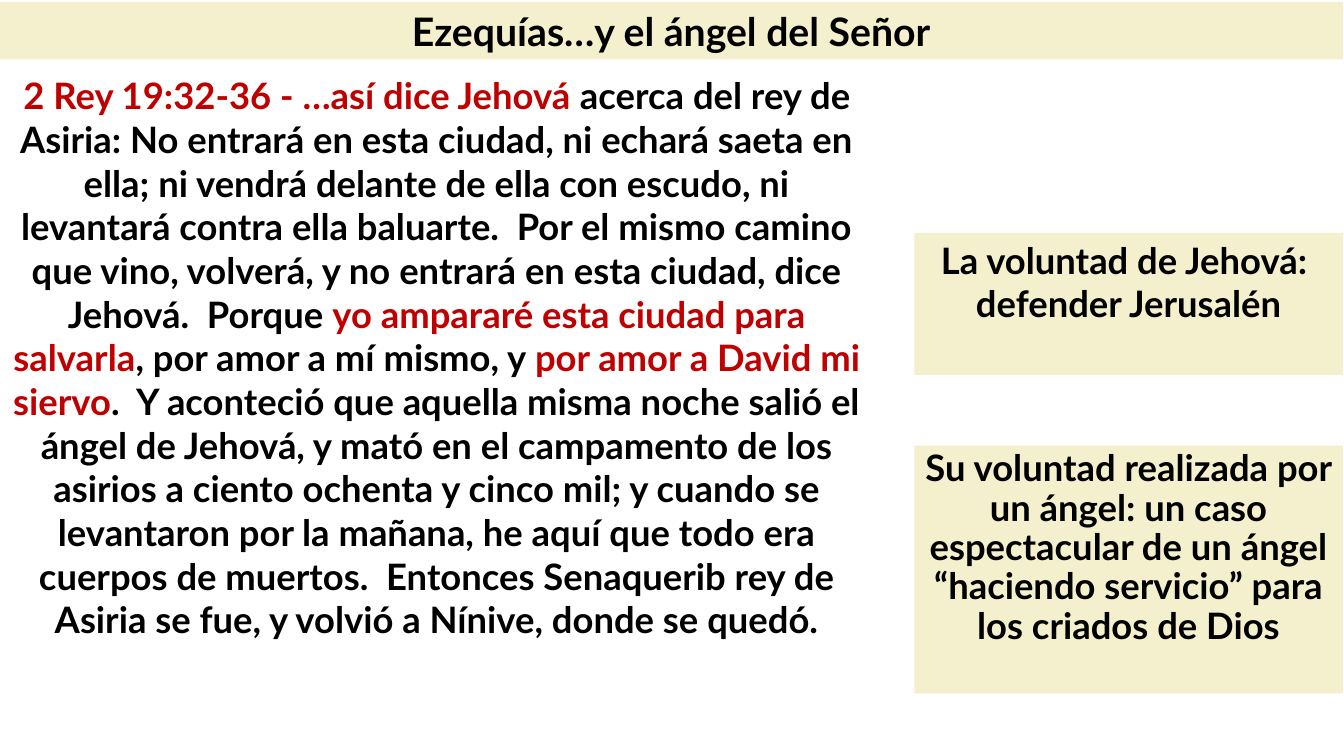
from dataclasses import dataclass

import pptx
import pptx.dml.color
import pptx.enum.shapes
import pptx.enum.text
import pptx.util

Inches = pptx.util.Inches


@dataclass(frozen=True)
class Theme:
    font: str = "Lato"
    title_size: int = 28
    body_size: int = 26
    text: str = "000000"
    emphasis: str = "C00000"
    panel: str = "F4EFCC"


def rgb(value):
    return pptx.dml.color.RGBColor.from_string(value)


class SlideBuilder:
    def __init__(self, slide, theme):
        self.slide = slide
        self.theme = theme

    def set_text(self, shape, runs, size, line_spacing=1.0):
        frame = shape.text_frame
        frame.word_wrap = True
        frame.vertical_anchor = pptx.enum.text.MSO_ANCHOR.TOP
        paragraph = frame.paragraphs[0]
        paragraph.alignment = pptx.enum.text.PP_ALIGN.CENTER
        paragraph.line_spacing = line_spacing
        paragraph.font.name = self.theme.font
        paragraph.font.size = pptx.util.Pt(size)
        paragraph.font.bold = True
        for text, color in runs:
            run = paragraph.add_run()
            run.text = text
            run.font.color.rgb = rgb(color)

    def panel(self, left, top, width, height, text, size, line_spacing=1.0):
        shape = self.slide.shapes.add_shape(
            pptx.enum.shapes.MSO_SHAPE.RECTANGLE,
            Inches(left), Inches(top), Inches(width), Inches(height))
        shape.shadow.inherit = False
        shape.fill.solid()
        shape.fill.fore_color.rgb = rgb(self.theme.panel)
        shape.line.fill.background()
        self.set_text(shape, [(text, self.theme.text)], size, line_spacing)

    def passage(self, left, top, width, height, runs):
        shape = self.slide.shapes.add_textbox(
            Inches(left), Inches(top), Inches(width), Inches(height))
        self.set_text(shape, runs, self.theme.body_size)


def main():
    presentation = pptx.Presentation()
    presentation.slide_width = Inches(13.33)
    presentation.slide_height = Inches(7.5)
    slide = presentation.slides.add_slide(presentation.slide_layouts[6])
    theme = Theme()
    builder = SlideBuilder(slide, theme)

    builder.panel(-0.01, 0.02, 13.33, 0.57,
                  "Ezequías…y el ángel del Señor", theme.title_size)
    builder.panel(9.07, 2.31, 4.25, 1.41,
                  "La voluntad de Jehová:  defender Jerusalén",
                  theme.body_size)
    builder.passage(0, 0.68, 8.67, 6.66, [
        ("2 Rey 19:32-36 - …así dice Jehová ", theme.emphasis),
        ("acerca del rey de Asiria: No entrará en esta ciudad, ni echará "
         "saeta en ella; ni vendrá delante de ella con escudo, ni levantará "
         "contra ella baluarte.  Por el mismo camino que vino, volverá, y no "
         "entrará en esta ciudad, dice Jehová.  Porque ", theme.text),
        ("yo ampararé esta ciudad para salvarla", theme.emphasis),
        (", por amor a mí mismo, y ", theme.text),
        ("por amor a David mi siervo", theme.emphasis),
        (".  Y aconteció que aquella misma noche salió el ángel de Jehová, y "
         "mató en el campamento de los asirios a ciento ochenta y cinco mil; "
         "y cuando se levantaron por la mañana, he aquí que todo era cuerpos "
         "de muertos.  Entonces Senaquerib rey de Asiria se fue, y volvió a "
         "Nínive, donde se quedó.", theme.text),
    ])
    builder.panel(9.07, 4.42, 4.25, 2.46,
                  "Su voluntad realizada por un ángel: un caso espectacular de "
                  "un ángel “haciendo servicio” para los criados de Dios",
                  theme.body_size, line_spacing=0.9)

    presentation.save("out.pptx")


if __name__ == "__main__":
    main()
